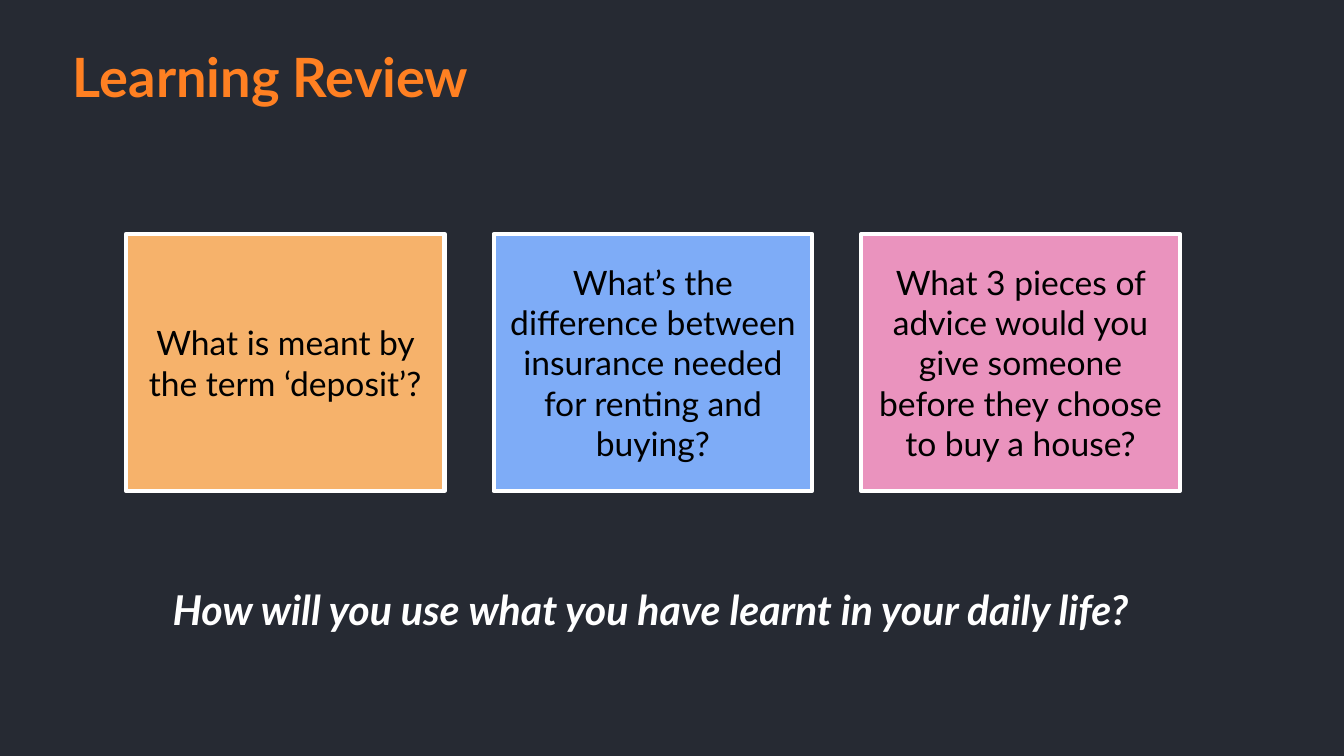
from pptx import Presentation
from pptx.dml.color import RGBColor
from pptx.enum.shapes import MSO_SHAPE as Shape
from pptx.enum.text import MSO_ANCHOR as Anchor, PP_ALIGN as Align
from pptx.util import Emu, Pt

SCALE = 914400 / 134.4  # EMU in one px
FONT = "Lato"
HUES = {
    "back": "262A33",
    "title": "FF8022",
    "white": "FFFFFF",
    "black": "000000",
    "amber": "F6B26B",
    "blue": "7EACF7",
    "pink": "EA93BE",
}
CARDS = [
    ("amber", "What is meant by the term ‘deposit’?"),
    ("blue", "What’s the difference between insurance needed for renting and buying?"),
    ("pink", "What 3 pieces of advice would you give someone before they choose to buy a house?"),
]


def px(n):
    return Emu(round(n * SCALE))


def hue(name):
    return RGBColor.from_string(HUES[name])


def write(shape, text, size, color, align=Align.CENTER, anchor=Anchor.MIDDLE,
          bold=False, italic=False):
    frame = shape.text_frame
    frame.word_wrap = True
    frame.vertical_anchor = anchor
    frame.margin_left = frame.margin_right = px(13)
    frame.margin_top = frame.margin_bottom = px(13)
    para = frame.paragraphs[0]
    para.alignment = align
    run = para.add_run()
    run.text = text
    font = run.font
    font.name, font.size = FONT, Pt(size)
    font.bold, font.italic = bold, italic
    font.color.rgb = hue(color)


def panel(slide, box, fill, edge, width):
    shape = slide.shapes.add_shape(Shape.RECTANGLE, *map(px, box))
    shape.shadow.inherit = False
    shape.fill.solid()
    shape.fill.fore_color.rgb = hue(fill)
    shape.line.color.rgb = hue(edge)
    shape.line.width = Pt(width)
    return shape


# Heading
def head(slide, box):
    shape = slide.shapes.add_textbox(*map(px, box))
    write(shape, "Learning Review", 29, "title", align=Align.LEFT, bold=True)


# Row of question cards, equal in width and gap
def cards(slide, box, gap=49):
    left, top, width, height = box
    wide = (width - gap * (len(CARDS) - 1)) / len(CARDS)
    for i, (fill, text) in enumerate(CARDS):
        spot = (left + i * (wide + gap), top, wide, height)
        write(panel(slide, spot, fill, "white", 2.25), text, 18, "black")


# Closing question
def close(slide, box):
    shape = panel(slide, box, "back", "back", 1.5)
    write(shape, "How will you use what you have learnt in your daily life?",
          22, "white", anchor=Anchor.TOP, bold=True, italic=True)


def main():
    deck = Presentation()
    deck.slide_width, deck.slide_height = px(1344), px(756)
    slide = deck.slides.add_slide(deck.slide_layouts[6])
    slide.background.fill.solid()
    slide.background.fill.fore_color.rgb = hue("back")
    head(slide, (60, 38, 857, 75))
    cards(slide, (126, 234, 1054, 257))
    close(slide, (121, 571, 1059, 77))
    deck.save("out.pptx")


if __name__ == "__main__":
    main()
